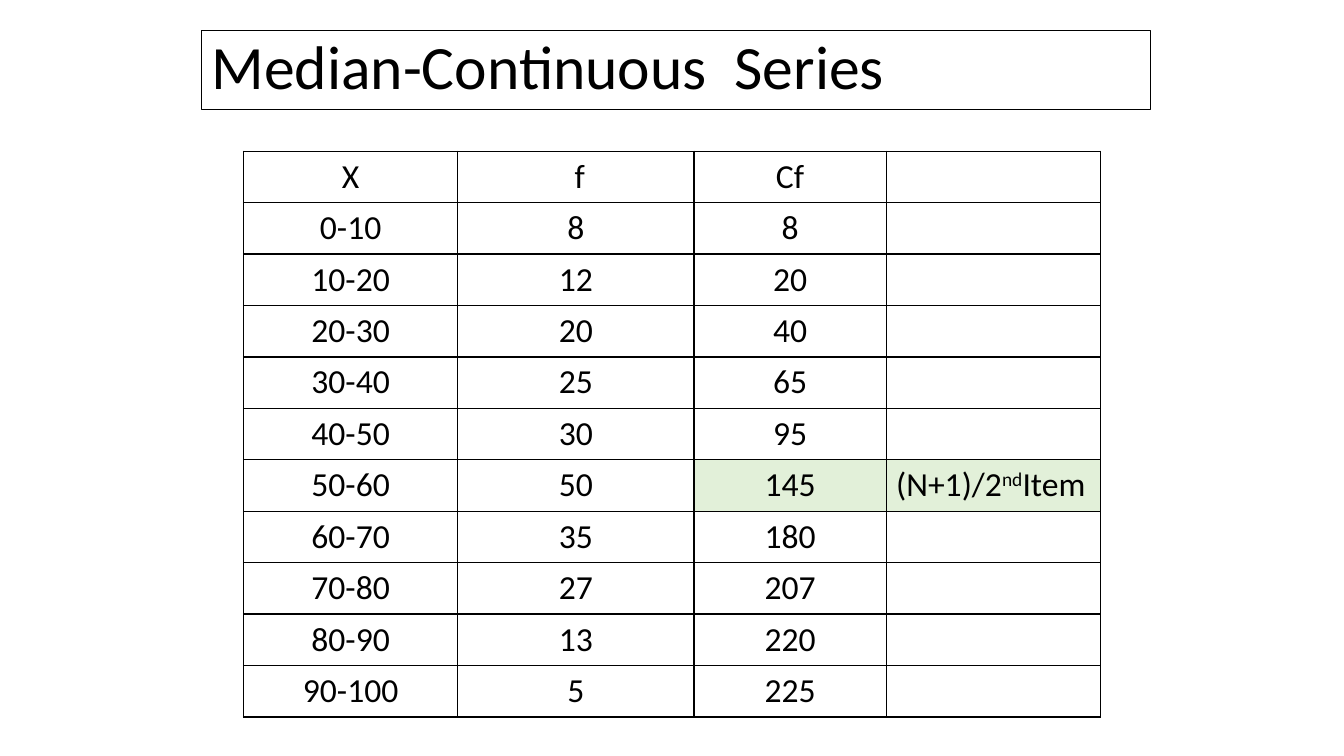
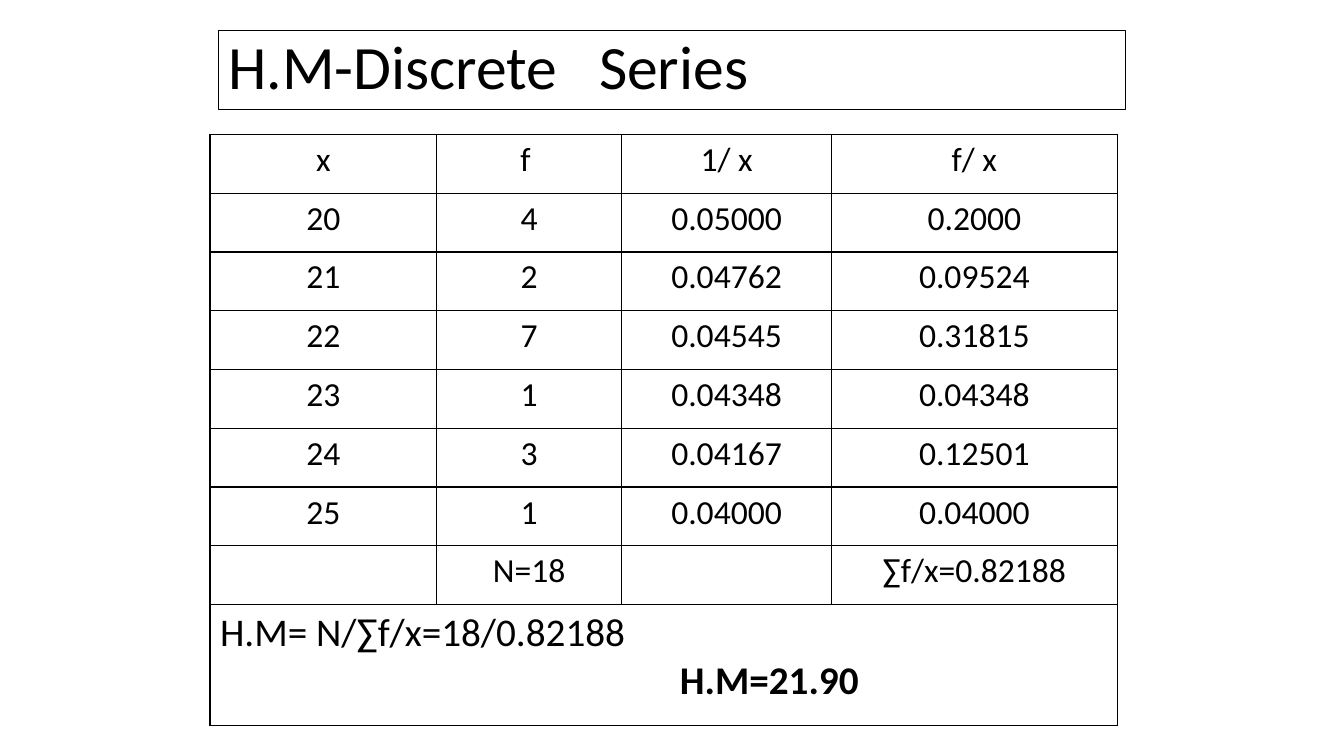
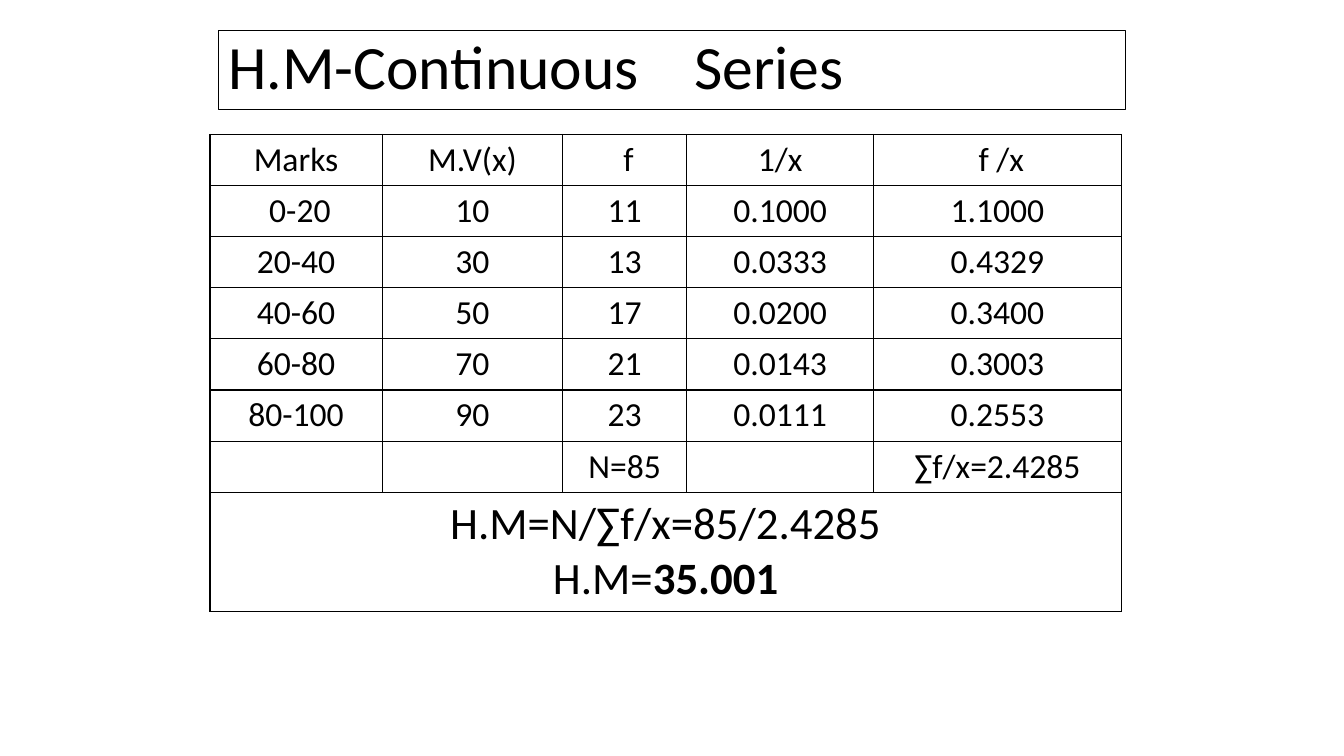
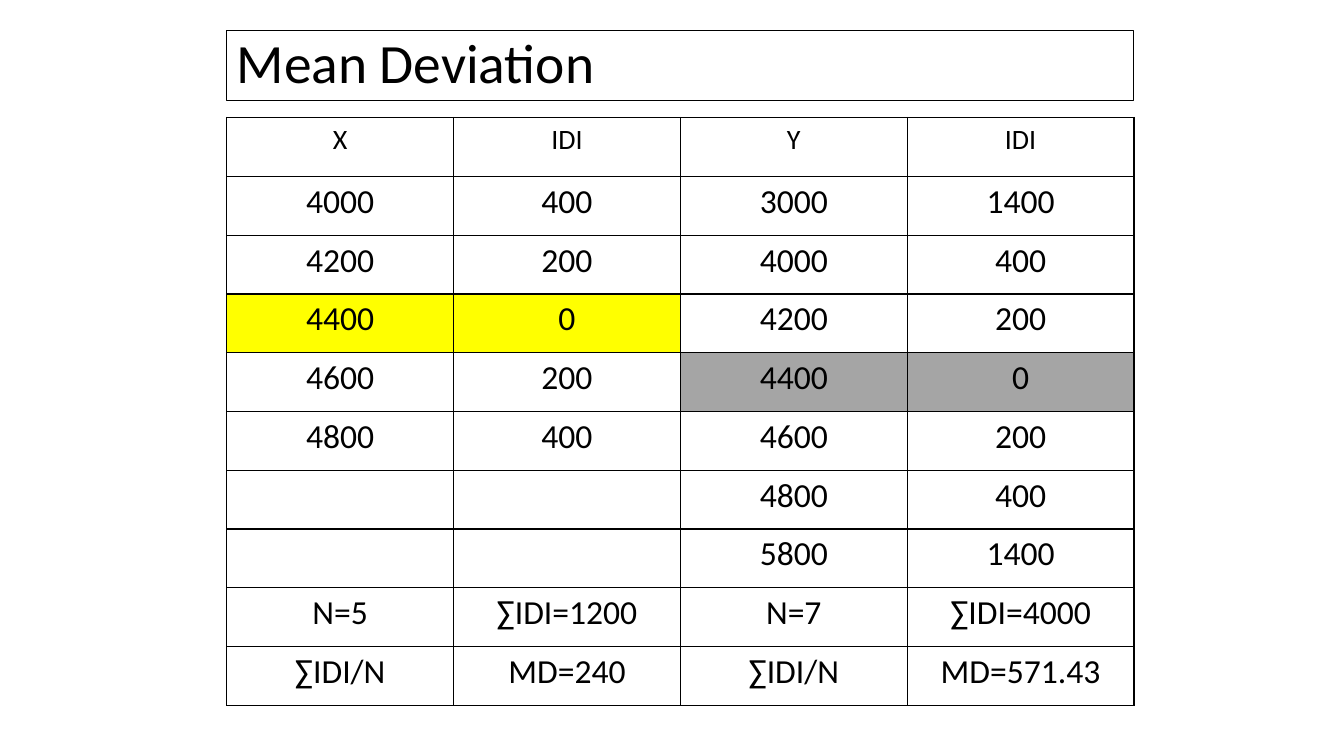
from pptx import Presentation
from pptx.dml.color import RGBColor
from pptx.enum.shapes import MSO_SHAPE
from pptx.enum.text import MSO_ANCHOR, PP_ALIGN
from pptx.oxml import parse_xml
from pptx.oxml.ns import nsdecls
from pptx.util import Pt

PX = 9525
FONT = "Calibri"
COLORS = {
    "ink": "000000",
    "paper": "FFFFFF",
    "green": "E2F0D9",
    "yellow": "FFFF00",
    "gray": "A5A5A5",
}


def px(n):
    """Turn a length in px into EMU."""
    return n * PX


def rgb(name):
    """Look up a named colour."""
    return RGBColor.from_string(COLORS[name])


def style_runs(p, size):
    """Give every run of a paragraph the shared font and colour."""
    for r in p.runs:
        r.font.name = FONT
        r.font.size = Pt(size)
        r.font.color.rgb = rgb("ink")


def add_title(s, text, box, size=44):
    """Place the outlined title in its box."""
    sp = s.shapes.add_shape(MSO_SHAPE.RECTANGLE, *map(px, box))
    sp.shadow.inherit = False
    sp.fill.background()
    sp.line.color.rgb = rgb("ink")
    sp.line.width = Pt(0.75)
    tf = sp.text_frame
    tf.word_wrap = True
    tf.vertical_anchor = MSO_ANCHOR.MIDDLE
    tf.text = text
    p = tf.paragraphs[0]
    p.alignment = PP_ALIGN.LEFT
    p.line_spacing = 0.9
    style_runs(p, size)


def fill_cell(cell, color):
    """Fill a cell with a named colour."""
    cell.fill.solid()
    cell.fill.fore_color.rgb = rgb(color)


def add_borders(cell):
    """Draw a thin line on all four sides of a cell."""
    tcPr = cell._tc.get_or_add_tcPr()
    for i, side in enumerate("LRTB"):
        tcPr.insert(i, parse_xml(
            f'<a:ln{side} {nsdecls("a")} w="12700"><a:solidFill>'
            f'<a:srgbClr val="{COLORS["ink"]}"/></a:solidFill></a:ln{side}>'))


def write_cell(cell, text, size=24):
    """Write centred text into a cell."""
    cell.text_frame.text = text
    for p in cell.text_frame.paragraphs:
        p.alignment = PP_ALIGN.CENTER
        style_runs(p, size)


def add_grid(s, left, top, widths, heights, rows, head_size=24):
    """Place a ruled table, its rows given as lists of text."""
    frame = s.shapes.add_table(len(heights), len(widths), px(left), px(top),
                               px(sum(widths)), px(sum(heights)))
    tb = frame.table
    tb.first_row = tb.horz_banding = False
    for col, w in zip(tb.columns, widths):
        col.width = px(w)
    for row, h in zip(tb.rows, heights):
        row.height = px(h)
    for cell in tb.iter_cells():
        fill_cell(cell, "paper")
        add_borders(cell)
    for i, texts in enumerate(rows):
        for j, text in enumerate(texts):
            if text:
                write_cell(tb.cell(i, j), text, 24 if i else head_size)
    return tb


def add_result(tb, text, size):
    """Merge the last row into one result cell and return its paragraphs."""
    last = len(tb.rows) - 1
    cell = tb.cell(last, 0)
    cell.merge(tb.cell(last, len(tb.columns) - 1))
    write_cell(cell, text, size)
    return cell.text_frame.paragraphs


def median_slide(s):
    """Median of a continuous series, with the median class marked."""
    add_title(s, "Median-Continuous  Series", (192, 29, 904, 75))
    freqs = [8, 12, 20, 25, 30, 50, 35, 27, 13, 5]
    rows = [["X", " f", "Cf"]]
    for i, f in enumerate(freqs):
        rows.append([f"{i * 10}-{i * 10 + 10}", str(f), str(sum(freqs[:i + 1]))])
    tb = add_grid(s, 232, 144, [204, 225, 183, 204], [49] * 11, rows)
    for j in (2, 3):
        fill_cell(tb.cell(6, j), "green")
    p = tb.cell(6, 3).text_frame.paragraphs[0]
    for text in ("(N+1)/2", "nd", "Item"):
        p.add_run().text = text
    style_runs(p, 24)
    p.runs[1]._r.get_or_add_rPr().set("baseline", "30000")


def discrete_slide(s):
    """Harmonic mean of a discrete series."""
    add_title(s, "H.M-Discrete   Series", (208, 29, 864, 75))
    rows = [
        ["x", "f ", "1/ x", " f/ x "],
        ["20", "4", "0.05000", "0.2000"],
        ["21", "2", "0.04762", "0.09524"],
        ["22", "7", "0.04545", "0.31815"],
        ["23", "1", "0.04348", "0.04348"],
        ["24", "3", "0.04167", "0.12501"],
        ["25", "1", "0.04000", "0.04000"],
        ["", "N=18", "", "∑f/x=0.82188"],
    ]
    tb = add_grid(s, 200, 128, [216, 176, 200, 272], [56] * 8 + [115], rows)
    formula, mean = add_result(tb, "H.M= N/∑f/x=18/0.82188\nH.M=21.90", 28)
    formula.alignment = mean.alignment = PP_ALIGN.LEFT
    mean._p.get_or_add_pPr().set("marL", str(px(438)))
    mean.runs[0].font.bold = True


def continuous_slide(s):
    """Harmonic mean of a continuous series."""
    add_title(s, "H.M-Continuous    Series", (208, 29, 864, 75))
    rows = [
        ["Marks", "M.V(x)", " f", "1/x", " f /x"],
        [" 0-20", "10", "11", "0.1000", "1.1000"],
        ["20-40", "30", "13", "0.0333", "0.4329"],
        ["40-60", "50", "17", "0.0200", "0.3400"],
        ["60-80", "70", "21", "0.0143", "0.3003"],
        ["80-100", "90", "23", "0.0111", "0.2553"],
        ["", "", "N=85", "", "∑f/x=2.4285"],
    ]
    tb = add_grid(s, 200, 128, [164, 172, 118, 178, 236], [48] * 7 + [113], rows)
    mean = add_result(tb, "H.M=N/∑f/x=85/2.4285\nH.M=", 32)[1]
    mean.add_run().text = "35.001"
    style_runs(mean, 32)
    mean.runs[1].font.bold = True


def deviation_slide(s):
    """Mean deviation of two series, with both medians marked."""
    add_title(s, "Mean Deviation", (216, 29, 864, 67), 39.6)
    rows = [
        ["X", "ІDI", "Y", "IDI"],
        ["4000", "400", "3000", "1400"],
        ["4200", "200", "4000", "400"],
        ["4400", "0", "4200", "200"],
        ["4600", "200", "4400", "0"],
        ["4800", "400", "4600", "200"],
        ["", "", "4800", "400"],
        ["", "", "5800", "1400"],
        ["N=5", "∑IDI=1200", "N=7", "∑IDI=4000"],
        ["∑IDI/N", "MD=240", "∑IDI/N", "MD=571.43"],
    ]
    tb = add_grid(s, 216, 112, [216] * 4, [56] * 10, rows, head_size=20)
    for i, j, color in ((3, 0, "yellow"), (4, 2, "gray")):
        fill_cell(tb.cell(i, j), color)
        fill_cell(tb.cell(i, j + 1), color)


def main():
    """Build the four slides and save them."""
    prs = Presentation()
    prs.slide_width, prs.slide_height = px(1280), px(720)
    for build in (median_slide, discrete_slide, continuous_slide, deviation_slide):
        build(prs.slides.add_slide(prs.slide_layouts[6]))
    prs.save("out.pptx")


if __name__ == "__main__":
    main()
